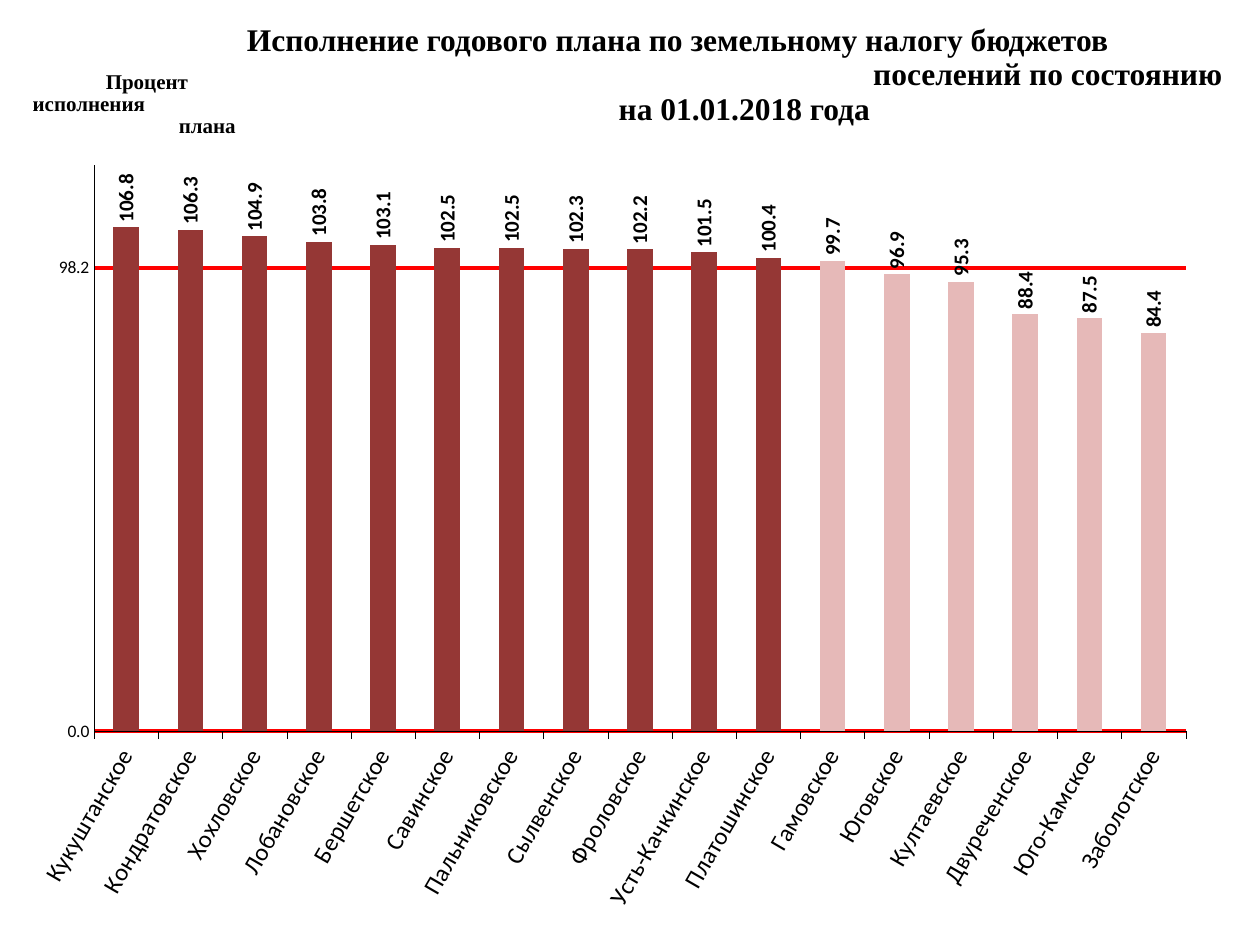
import pptx
import pptx.chart.data
import pptx.dml.color
import pptx.enum.chart
import pptx.enum.text
import pptx.oxml
import pptx.oxml.ns
import pptx.util
from dataclasses import dataclass
from pptx.util import Inches


@dataclass(frozen=True)
class Theme:
    heading_font: str = "Times New Roman"
    chart_font: str = "Calibri"
    text: str = "000000"
    above_plan: str = "953735"
    below_plan: str = "E6B9B8"
    grid: str = "FF0000"
    title_size: int = 18
    category_size: int = 14
    label_size: int = 12
    axis_size: int = 10


theme = Theme()


def write_lines(text_frame, lines, size, spacing):
    text_frame.word_wrap = True
    text_frame.auto_size = pptx.enum.text.MSO_AUTO_SIZE.NONE
    text_frame.vertical_anchor = pptx.enum.text.MSO_ANCHOR.TOP
    text_frame.margin_left = text_frame.margin_right = 0
    text_frame.margin_top = text_frame.margin_bottom = 0
    for index, (text, indent) in enumerate(lines):
        paragraph = text_frame.add_paragraph() if index else text_frame.paragraphs[0]
        paragraph.alignment = pptx.enum.text.PP_ALIGN.LEFT
        paragraph.line_spacing = pptx.util.Pt(spacing)
        paragraph.space_before = pptx.util.Pt(0)
        paragraph._p.get_or_add_pPr().set("marL", str(Inches(indent)))
        run = paragraph.add_run()
        run.text = text
        style_font(run.font, theme.heading_font, size, True)


def style_font(font, name, size, bold=False):
    font.name = name
    font.size = pptx.util.Pt(size)
    font.bold = bold
    font.color.rgb = pptx.dml.color.RGBColor.from_string(theme.text)


presentation = pptx.Presentation()
presentation.slide_width = Inches(10)
presentation.slide_height = Inches(7.5)
slide = presentation.slides.add_slide(presentation.slide_layouts[5])

title = slide.shapes.title
title.left, title.top = Inches(1.96), Inches(0.19)
title.width, title.height = Inches(7.9), Inches(0.85)
write_lines(
    title.text_frame,
    [
        ("Исполнение годового плана по земельному налогу бюджетов", 0),
        ("поселений по состоянию", 4.97),
        ("на 01.01.2018 года", 2.95),
    ],
    theme.title_size,
    19.5,
)

execution = [
    ("Кукуштанское", 106.8),
    ("Кондратовское", 106.3),
    ("Хохловское", 104.9),
    ("Лобановское", 103.8),
    ("Бершетское", 103.1),
    ("Савинское", 102.5),
    ("Пальниковское", 102.5),
    ("Сылвенское", 102.3),
    ("Фроловское", 102.2),
    ("Усть-Качкинское", 101.5),
    ("Платошинское", 100.4),
    ("Гамовское", 99.7),
    ("Юговское", 96.9),
    ("Култаевское", 95.3),
    ("Двуреченское", 88.4),
    ("Юго-Камское", 87.5),
    ("Заболотское", 84.4),
]
chart_data = pptx.chart.data.CategoryChartData(number_format="0.0")
chart_data.categories = [settlement for settlement, percent in execution]
chart_data.add_series("Series 1", [percent for settlement, percent in execution])
chart = slide.shapes.add_chart(
    pptx.enum.chart.XL_CHART_TYPE.COLUMN_CLUSTERED,
    Inches(0), Inches(0.03), Inches(9.96), Inches(7.45),
    chart_data,
).chart
chart.has_title = False
chart.has_legend = False
style_font(chart.font, theme.chart_font, theme.axis_size)

namespaces = pptx.oxml.ns.nsdecls("c", "a")
chart_element = chart._chartSpace.xpath("c:chart")[0]
chart_element.addnext(pptx.oxml.parse_xml(
    f"<c:spPr {namespaces}><a:noFill/><a:ln><a:noFill/></a:ln></c:spPr>"
))
plot_area = chart_element.xpath("c:plotArea")[0]
for layout in plot_area.xpath("c:layout"):
    plot_area.remove(layout)
plot_area.insert(0, pptx.oxml.parse_xml(
    f'<c:layout {namespaces}><c:manualLayout><c:layoutTarget val="inner"/>'
    '<c:xMode val="edge"/><c:yMode val="edge"/><c:x val="0.075"/><c:y val="0.172"/>'
    '<c:w val="0.87"/><c:h val="0.603"/></c:manualLayout></c:layout>'
))

plot = chart.plots[0]
plot.gap_width = 150
plot.vary_by_categories = False
series = plot.series[0]
series.invert_if_negative = False
series.format.fill.solid()
series.format.fill.fore_color.rgb = pptx.dml.color.RGBColor.from_string(theme.above_plan)
for index, (settlement, percent) in enumerate(execution):
    if percent < 100:
        fill = series.points[index].format.fill
        fill.solid()
        fill.fore_color.rgb = pptx.dml.color.RGBColor.from_string(theme.below_plan)

labels = series.data_labels
labels.show_value = True
labels.number_format = "#,##0.0"
labels.number_format_is_linked = False
labels.position = pptx.enum.chart.XL_LABEL_POSITION.OUTSIDE_END
style_font(labels.font, theme.chart_font, theme.label_size, True)

category_axis = chart.category_axis
category_axis.major_tick_mark = pptx.enum.chart.XL_TICK_MARK.OUTSIDE
category_axis.tick_label_position = pptx.enum.chart.XL_TICK_LABEL_POSITION.LOW
style_font(category_axis.tick_labels.font, theme.chart_font, theme.category_size)

value_axis = chart.value_axis
value_axis.minimum_scale = 0
value_axis.maximum_scale = 120
value_axis.major_unit = 98.2
value_axis.major_tick_mark = pptx.enum.chart.XL_TICK_MARK.NONE
value_axis.tick_labels.number_format = "0.0"
value_axis.tick_labels.number_format_is_linked = False
style_font(value_axis.tick_labels.font, theme.chart_font, theme.axis_size)
value_axis.has_major_gridlines = True

for line, color, width in [
    (category_axis.format.line, theme.text, 0.25),
    (value_axis.format.line, theme.text, 0.25),
    (value_axis.major_gridlines.format.line, theme.grid, 2),
]:
    line.color.rgb = pptx.dml.color.RGBColor.from_string(color)
    line.width = pptx.util.Pt(width)

for element, degrees in [(labels._element, -90), (category_axis._element, -60)]:
    body = element.xpath("c:txPr/a:bodyPr")[0]
    body.set("rot", str(degrees * 60000))
    body.set("vert", "horz")

axis_caption = slide.shapes.add_textbox(Inches(0.26), Inches(0.57), Inches(1.7), Inches(0.55))
write_lines(
    axis_caption.text_frame,
    [("Процент", 0.58), ("исполнения", 0), ("плана", 1.16)],
    theme.label_size,
    12.5,
)

presentation.save("out.pptx")
